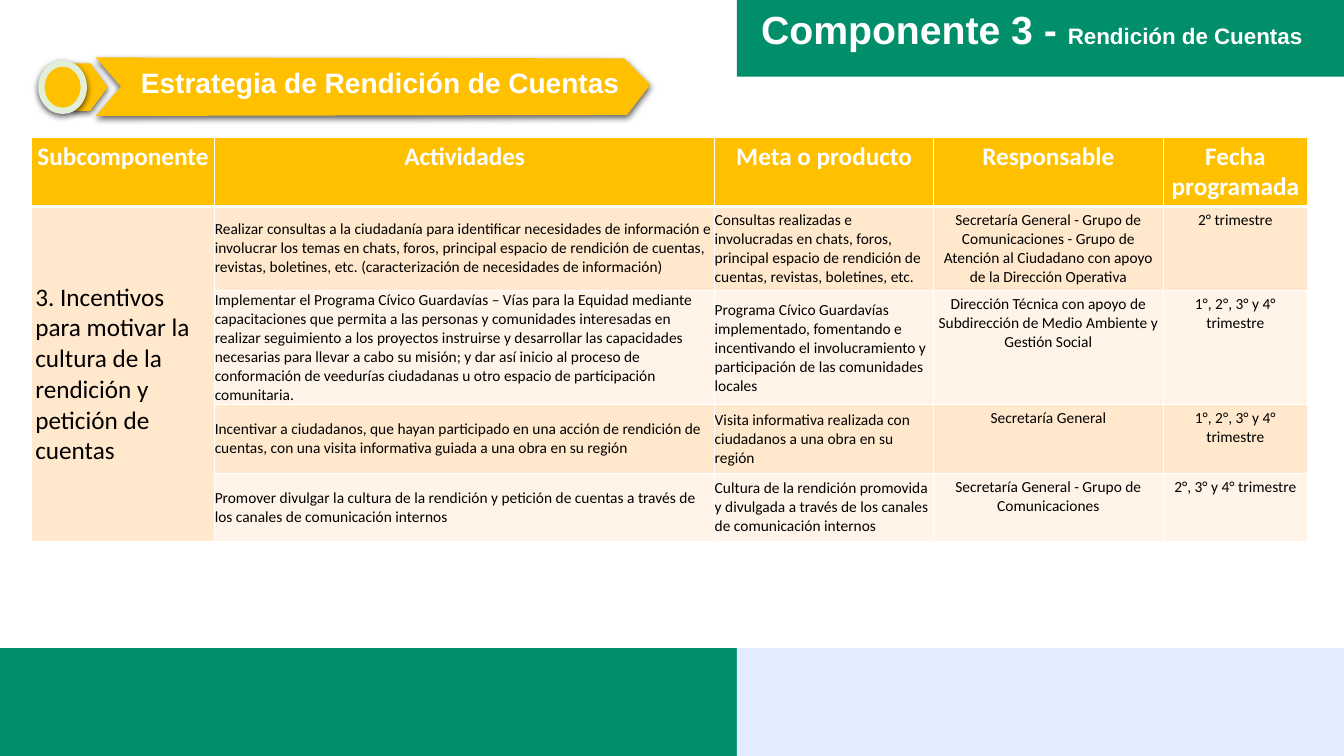
import pptx
import pptx.dml.color
import pptx.enum.shapes
import pptx.enum.text
import pptx.oxml
import pptx.oxml.ns
import pptx.util


class Theme:
    green, pale_blue = "018E6B", "E2ECFD"
    amber, pale_green = "FFC000", "E2F0D9"
    white, black = "FFFFFF", "000000"
    bands = ("FFE8CC", "FFF4E7")
    heading_font, table_font = "Arial", "Calibri"
    title_size, subtitle_size, ribbon_size = 28, 16, 20
    header_size, body_size = 18, 11


Shapes = pptx.enum.shapes.MSO_SHAPE
Align = pptx.enum.text.PP_ALIGN
Anchor = pptx.enum.text.MSO_ANCHOR
color = pptx.dml.color.RGBColor.from_string
namespace = pptx.oxml.ns.nsdecls("a")

presentation = pptx.Presentation()
presentation.slide_width = pptx.util.Inches(13.33)
presentation.slide_height = pptx.util.Inches(7.5)
slide = presentation.slides.add_slide(presentation.slide_layouts[5])


def share(*percents):
    """Turn percents of the slide's width and height, in turn, into lengths."""
    sides = (presentation.slide_width, presentation.slide_height)
    return [round(sides[index % 2] * percent / 100) for index, percent in enumerate(percents)]


def format_font(run, name, size, fill, bold):
    run.font.name = name
    run.font.size = pptx.util.Pt(size)
    run.font.color.rgb = color(fill)
    run.font.bold = bold


# Bars at the top and bottom, split at one common column
split, band_top, band_height = 54.83, 85.73, 14.27
bars = [
    (split, 0, 100 - split, 10.13, Theme.green),
    (0, band_top, split, band_height, Theme.green),
    (split, band_top, 100 - split, band_height, Theme.pale_blue),
]
for *place, fill in bars:
    bar = slide.shapes.add_shape(Shapes.RECTANGLE, *share(*place))
    bar.shadow.inherit = False
    bar.fill.solid()
    bar.fill.fore_color.rgb = color(fill)
    bar.line.fill.background()

# Title, brought in front of the green bar
title = slide.shapes.title
title.element.getparent().append(title.element)
title.left, title.top, title.width, title.height = share(55.88, 0, 43.2, 7.6)
title.text_frame.vertical_anchor = Anchor.TOP
title.text_frame.auto_size = pptx.enum.text.MSO_AUTO_SIZE.NONE
title_paragraph = title.text_frame.paragraphs[0]
title_paragraph.alignment = Align.LEFT
for text, size in (("Componente 3 - ", Theme.title_size),
                   ("Rendición de Cuentas", Theme.subtitle_size)):
    run = title_paragraph.add_run()
    run.text = text
    format_font(run, Theme.heading_font, size, Theme.white, True)

# Table of activities
headers = ("Subcomponente", "Actividades", "Meta o producto", "Responsable", "Fecha programada")
subcomponent = "3. Incentivos para motivar la cultura de la rendición y petición de cuentas"
activities = [
    (subcomponent,
     "Realizar consultas a la ciudadanía para identificar necesidades de información e "
     "involucrar los temas en chats, foros, principal espacio de rendición de cuentas, "
     "revistas, boletines, etc. (caracterización de necesidades de información)",
     "Consultas realizadas e involucradas en chats, foros, principal espacio de rendición "
     "de cuentas, revistas, boletines, etc.",
     "Secretaría General - Grupo de Comunicaciones - Grupo de Atención al Ciudadano con "
     "apoyo de la Dirección Operativa",
     "2° trimestre"),
    ("",
     "Implementar el Programa Cívico Guardavías – Vías para la Equidad mediante "
     "capacitaciones que permita a las personas y comunidades interesadas en realizar "
     "seguimiento a los proyectos instruirse y desarrollar las capacidades necesarias para "
     "llevar a cabo su misión; y dar así inicio al proceso de conformación de veedurías "
     "ciudadanas u otro espacio de participación comunitaria.",
     "Programa Cívico Guardavías implementado, fomentando e incentivando el "
     "involucramiento y participación de las comunidades locales",
     "Dirección Técnica con apoyo de Subdirección de Medio Ambiente y Gestión Social",
     "1°, 2°, 3° y 4° trimestre"),
    ("",
     "Incentivar a ciudadanos, que hayan participado en una acción de rendición de "
     "cuentas, con una visita informativa guiada a una obra en su región",
     "Visita informativa realizada con ciudadanos a una obra en su región",
     "Secretaría General",
     "1°, 2°, 3° y 4° trimestre"),
    ("",
     "Promover divulgar la cultura de la rendición y petición de cuentas a través de los "
     "canales de comunicación internos",
     "Cultura de la rendición promovida y divulgada a través de los canales de "
     "comunicación internos",
     "Secretaría General - Grupo de Comunicaciones",
     "2°, 3° y 4° trimestre"),
]
column_shares = (13.65, 37.2, 16.28, 17.1, 10.73)
row_shares = (9.07, 10.67, 14.8, 9.07, 9.07)
table = slide.shapes.add_table(
    len(row_shares), len(column_shares),
    *share(2.33, 18.13, sum(column_shares), sum(row_shares))).table
for column, width in zip(table.columns, column_shares):
    column.width = share(width)[0]
for row, height in zip(table.rows, row_shares):
    row.height = share(0, height)[1]
table.cell(1, 0).merge(table.cell(4, 0))

for row_index, texts in enumerate([headers, *activities]):
    is_header = row_index == 0
    for column_index, text in enumerate(texts):
        cell = table.cell(row_index, column_index)
        is_description = not is_header and column_index in (1, 2)
        is_left = is_description or (not is_header and column_index == 0)
        inset = share(0 if is_description else 0.3)[0]
        cell.margin_left = cell.margin_right = cell.margin_top = cell.margin_bottom = inset
        cell.vertical_anchor = Anchor.MIDDLE if is_left else Anchor.TOP

        thick_side = {0: "B", 1: "T"}.get(row_index)
        for side in "LRTB":
            width = pptx.util.Pt(3 if side == thick_side else 1)
            cell._tc.get_or_add_tcPr().append(pptx.oxml.parse_xml(
                f'<a:ln{side} {namespace} w="{width}"><a:solidFill>'
                f'<a:srgbClr val="{Theme.white}"/></a:solidFill></a:ln{side}>'))
        cell.fill.solid()
        band = Theme.bands[0 if column_index == 0 else (row_index - 1) % 2]
        cell.fill.fore_color.rgb = color(Theme.amber if is_header else band)

        cell.text_frame.text = text
        paragraph = cell.text_frame.paragraphs[0]
        paragraph.alignment = Align.LEFT if is_left else Align.CENTER
        size = Theme.header_size if is_header or column_index == 0 else Theme.body_size
        for run in paragraph.runs:
            format_font(run, Theme.table_font, size,
                        Theme.white if is_header else Theme.black, is_header)

# Ribbon with the section heading
ribbon = slide.shapes.add_group_shape()
outline = [share(*point) for point in (
    (7.13, 7.6), (9, 7.6), (46.43, 7.73), (48.38, 11.2),
    (46.65, 15.2), (9, 15.33), (7.13, 15.33), (9, 11.47))]
builder = ribbon.shapes.build_freeform(*outline[0], scale=1.0)
builder.add_line_segments(outline[1:], close=True)
arrow = builder.convert_to_shape()
plate = ribbon.shapes.add_shape(Shapes.PENTAGON, *share(5.4, 8.4, 2.63, 6.27))
ring = ribbon.shapes.add_shape(Shapes.OVAL, *share(3.08, 8.4, 3.15, 6.27))
for shape in (arrow, plate, ring):
    shape.fill.solid()
    shape.fill.fore_color.rgb = color(Theme.amber)
    shape.line.fill.background()
    shape.shadow.inherit = False
    effects = shape.element.spPr.find(pptx.oxml.ns.qn("a:effectLst"))
    effects.append(pptx.oxml.parse_xml(
        f'<a:outerShdw {namespace} blurRad="{pptx.util.Pt(4.5)}" dist="{pptx.util.Pt(1.5)}" '
        f'dir="5400000" algn="ctr" rotWithShape="0"><a:srgbClr val="{Theme.black}">'
        '<a:alpha val="63000"/></a:srgbClr></a:outerShdw>'))
ring.line.color.rgb = color(Theme.pale_green)
ring.line.width = pptx.util.Pt(4.5)

heading = ribbon.shapes.add_textbox(*share(9.75, 8, 43.05, 5.87))
heading.text_frame.word_wrap = True
heading.text_frame.text = "Estrategia de Rendición de Cuentas"
format_font(heading.text_frame.paragraphs[0].runs[0],
            Theme.heading_font, Theme.ribbon_size, Theme.white, True)

presentation.save("out.pptx")
